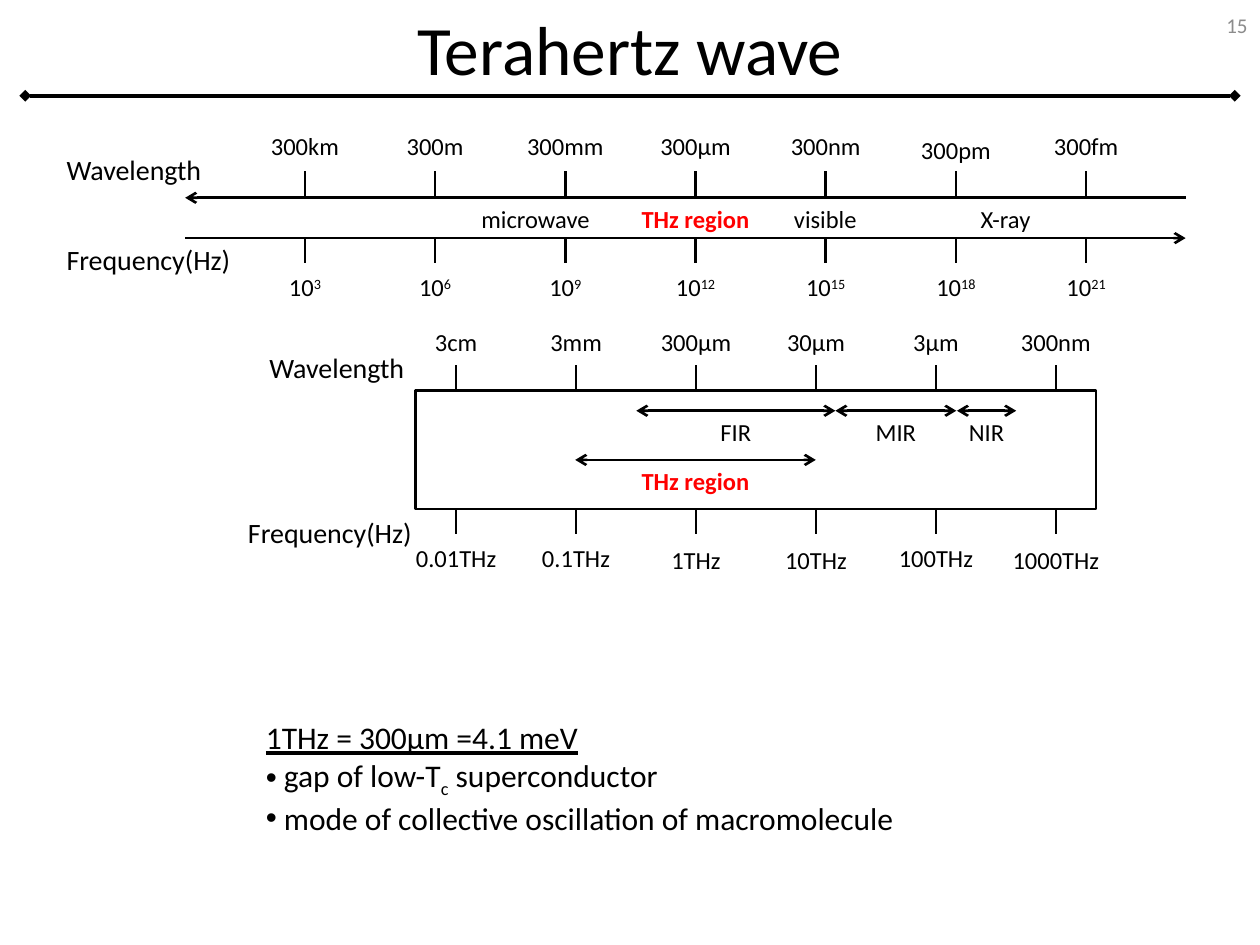
from dataclasses import dataclass
from typing import NamedTuple

from lxml.etree import SubElement as Sub
from pptx import Presentation
from pptx.dml.color import RGBColor as RGB
from pptx.enum.shapes import MSO_CONNECTOR as Link, MSO_SHAPE as Form
from pptx.enum.text import MSO_ANCHOR as Anchor, MSO_AUTO_SIZE as Fit, PP_ALIGN as Align
from pptx.oxml.ns import qn
from pptx.util import Inches, Pt


@dataclass(frozen=True)
class Theme:
    font: str = "Calibri"
    ink: RGB = RGB(0, 0, 0)
    hot: RGB = RGB(255, 0, 0)
    gray: RGB = RGB(0x8C, 0x8C, 0x8C)
    title: float = 39.6
    body: float = 18
    side: float = 16
    label: float = 14
    page: float = 12
    thin: float = 1.5
    thick: float = 2.25


THEME = Theme()


class Bit(NamedTuple):
    """One run of text; base is the raise or drop in percent."""
    text: str
    base: int = 0
    bold: bool = False
    under: bool = False
    color: RGB = THEME.ink


class Mark(NamedTuple):
    """The label of one tick."""
    bits: list[Bit]
    width: float = 0.79
    drop: float = 0


class Scale(NamedTuple):
    """A row of even ticks with a label each."""
    first: float
    last: float
    top: float
    label: float
    marks: list[Mark]


class Band(NamedTuple):
    """A named region, centred at mid; span is its arrow, if any."""
    bit: Bit
    mid: float
    top: float
    span: float = 0


class Side(NamedTuple):
    text: str
    left: float
    top: float


TICK = 0.2
THZ = Bit("THz region", bold=True, color=THEME.hot)


def plain(*names: str) -> list[Mark]:
    return [Mark([Bit(name)]) for name in names]


def power(exp: int) -> Mark:
    return Mark([Bit("10"), Bit(str(exp), 30)])


def hertz(num: str, drop: float = 0) -> Mark:
    return Mark([Bit(f"{num}THz")], 0.95, drop)


SCALES = [
    # Whole spectrum
    Scale(2.42, 8.62, 1.36, 0.99, [
        *plain("300km", "300m"), Mark([Bit("300mm")], 0.95),
        *plain("300μm", "300nm"), Mark([Bit("300pm")], drop=0.03), *plain("300fm")]),
    Scale(2.42, 8.62, 1.89, 2.11, [power(exp) for exp in range(3, 22, 3)]),
    # Close view around the THz region
    Scale(3.62, 8.38, 2.9, 2.55, plain("3cm", "3mm", "300μm", "30μm", "3μm", "300nm")),
    Scale(3.62, 8.38, 4.04, 4.26, [
        hertz("0.01"), hertz("0.1"), hertz("1", 0.02),
        hertz("10", 0.02), hertz("100"), hertz("1000", 0.02)]),
]
BANDS = [
    Band(Bit("microwave"), 4.25, 1.57),
    Band(THZ, 5.52, 1.57),
    Band(Bit("visible"), 6.55, 1.57),
    Band(Bit("X-ray"), 7.98, 1.57),
    Band(THZ, 5.52, 3.65, 1.91),
    Band(Bit("FIR"), 5.84, 3.26, 1.58),
    Band(Bit("MIR"), 7.11, 3.26, 0.96),
    Band(Bit("NIR"), 7.83, 3.26, 0.47),
]
SIDES = [
    Side("Wavelength", 0.43, 1.16), Side("Frequency(Hz)", 0.43, 1.88),
    Side("Wavelength", 2.04, 2.73), Side("Frequency(Hz)", 1.87, 4.04),
]
NOTES = [
    [Bit("1THz = 300μm =4.1 meV", under=True)],
    [Bit(" gap of low-T"), Bit("c", -25), Bit(" superconductor")],
    [Bit(" mode of collective oscillation of macromolecule")],
]


def write(par, bits: list[Bit], size: float, align=Align.LEFT) -> None:
    par.alignment = align
    for bit in bits:
        run = par.add_run()
        run.text = bit.text
        font = run.font
        font.name, font.size = THEME.font, Pt(size)
        font.bold, font.underline = bit.bold, bit.under
        font.color.rgb = bit.color
        if bit.base:
            run._r.get_or_add_rPr().set("baseline", str(bit.base * 1000))


def place(shape, left: float, top: float, width: float, height: float) -> None:
    shape.left, shape.top = Inches(left), Inches(top)
    shape.width, shape.height = Inches(width), Inches(height)


def text(slide, bits: list[Bit], left: float, top: float, width: float,
         height: float, size: float, align=Align.LEFT, anchor=Anchor.TOP) -> None:
    box = slide.shapes.add_textbox(*map(Inches, (left, top, width, height)))
    frame = box.text_frame
    frame.word_wrap, frame.vertical_anchor = True, anchor
    write(frame.paragraphs[0], bits, size, align)


def line(slide, x1: float, y1: float, x2: float, y2: float,
         head: str = "", tail: str = "", width: float = THEME.thin) -> None:
    link = slide.shapes.add_connector(Link.STRAIGHT, *map(Inches, (x1, y1, x2, y2)))
    link.line.color.rgb = THEME.ink
    link.line.width = Pt(width)
    ln = link.line._get_or_add_ln()
    for tag, kind in (("a:headEnd", head), ("a:tailEnd", tail)):
        if kind:
            Sub(ln, qn(tag), type=kind)
    Sub(link._element.spPr, qn("a:effectLst"))


def draw_scale(slide, scale: Scale) -> None:
    step = (scale.last - scale.first) / (len(scale.marks) - 1)
    for i, mark in enumerate(scale.marks):
        x = scale.first + i * step
        line(slide, x, scale.top, x, scale.top + TICK)
        text(slide, mark.bits, x - mark.width / 2, scale.label + mark.drop,
             mark.width, 0.34, THEME.label, Align.CENTER)


def draw_band(slide, band: Band) -> None:
    half = band.span / 2
    if half:
        line(slide, band.mid - half, band.top, band.mid + half, band.top, "arrow", "arrow")
    text(slide, [band.bit], band.mid - 0.56, band.top, 1.12, 0.34,
         THEME.label, Align.CENTER)


def draw_notes(body) -> None:
    place(body, 2.01, 5.65, 5.98, 1.01)
    frame = body.text_frame
    frame.auto_size = Fit.NONE
    for i, bits in enumerate(NOTES):
        par = frame.add_paragraph() if i else frame.paragraphs[0]
        par.space_before = Pt(0)
        props = par._p.get_or_add_pPr()
        props.set("marL", "0")
        props.set("indent", "0")
        if i:
            Sub(props, qn("a:buChar"), char="•")
        else:
            Sub(props, qn("a:buNone"))
        write(par, bits, THEME.body)


def main() -> None:
    deck = Presentation()
    deck.slide_width, deck.slide_height = Inches(10), Inches(7.5)
    slide = deck.slides.add_slide(deck.slide_layouts[1])

    # Title, rule and page number
    title = slide.shapes.title
    place(title, 0, 0, 10, 0.76)
    title.text_frame.vertical_anchor = Anchor.MIDDLE
    write(title.text_frame.paragraphs[0], [Bit("Terahertz wave")], THEME.title, Align.CENTER)
    line(slide, 0.2, 0.76, 9.8, 0.76, "diamond", "diamond", THEME.thick)
    text(slide, [Bit("15", color=THEME.gray)], 7.67, 0, 2.33, 0.4,
         THEME.page, Align.RIGHT, Anchor.MIDDLE)

    # Axes of the whole spectrum, frame of the close view
    line(slide, 9.41, 1.57, 1.47, 1.57, tail="arrow")
    line(slide, 1.47, 1.89, 9.41, 1.89, tail="arrow")
    frame = slide.shapes.add_shape(Form.RECTANGLE, *map(Inches, (3.3, 3.1, 5.4, 0.94)))
    frame.shadow.inherit = False
    frame.fill.background()
    frame.line.color.rgb, frame.line.width = THEME.ink, Pt(THEME.thin)

    # Ticks, regions and axis names
    for scale in SCALES:
        draw_scale(slide, scale)
    for band in BANDS:
        draw_band(slide, band)
    for side in SIDES:
        text(slide, [Bit(side.text)], side.left, side.top, 1.83, 0.37, THEME.side)

    draw_notes(slide.placeholders[1])
    deck.save("out.pptx")


if __name__ == "__main__":
    main()
